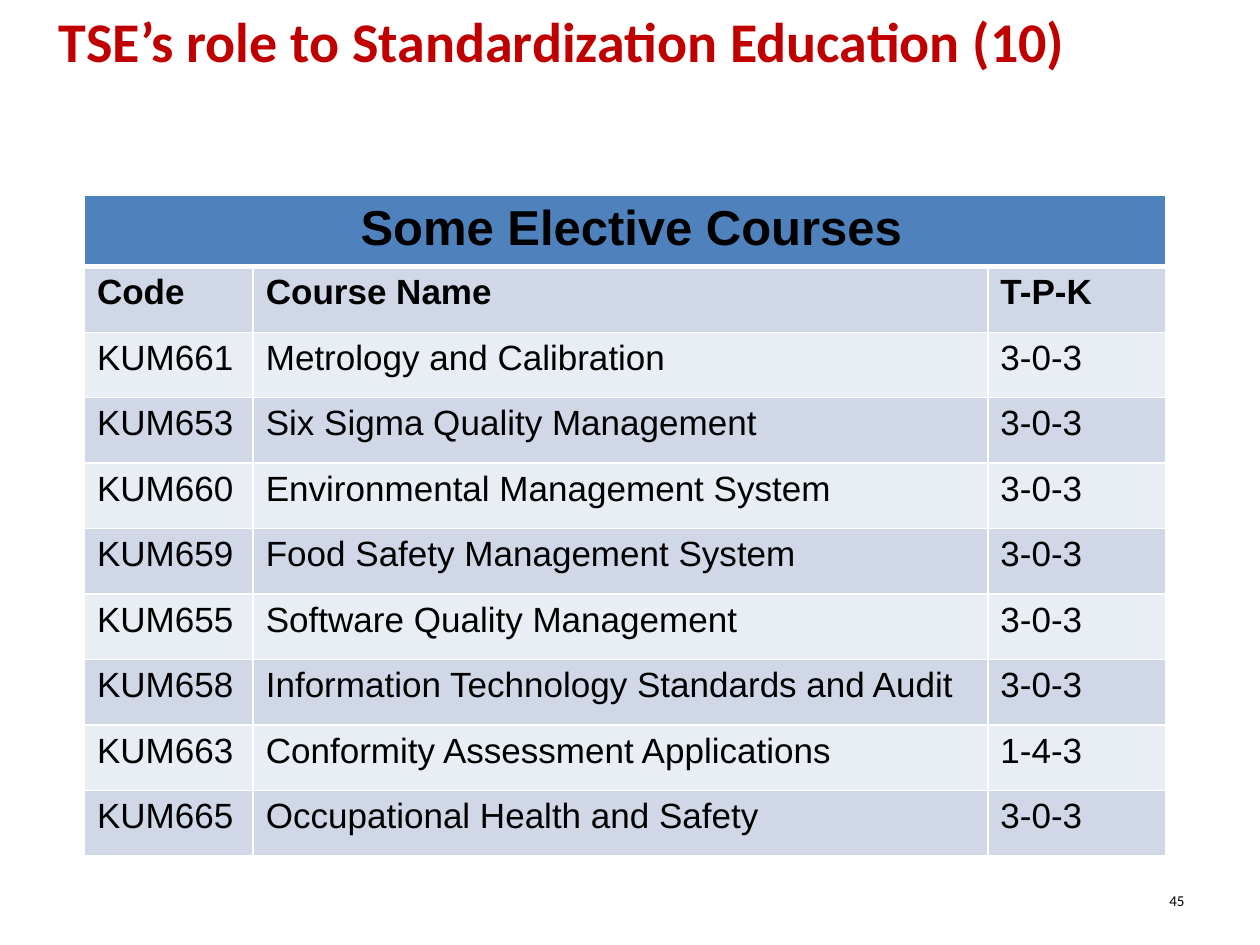
from dataclasses import dataclass

from lxml.etree import SubElement
from pptx import Presentation
from pptx.dml.color import RGBColor
from pptx.enum.text import MSO_ANCHOR, PP_ALIGN
from pptx.oxml.ns import qn
from pptx.util import Inches, Pt


@dataclass(frozen=True)
class Theme:
    title_red: str = "C00000"
    text: str = "000000"
    header_fill: str = "4F81BD"
    band_dark: str = "D0D8E8"
    band_light: str = "E9EDF4"
    border: str = "FFFFFF"
    title_size: float = 32
    header_size: float = 28
    body_size: float = 20
    number_size: float = 8.6
    heading_font: str = "Calibri"
    table_font: str = "Arial"


theme = Theme()


def write_text(text_frame, text, *, size, font, color=theme.text, bold=False,
               align=PP_ALIGN.LEFT):
    paragraph = text_frame.paragraphs[0]
    paragraph.alignment = align
    run = paragraph.add_run()
    run.text = text
    run.font.size = Pt(size)
    run.font.name = font
    run.font.bold = bold
    run.font.color.rgb = RGBColor.from_string(color)


def style_cell(cell, fill, *, top=1, bottom=1):
    properties = cell._tc.get_or_add_tcPr()
    for side, width in (("L", 1), ("R", 1), ("T", top), ("B", bottom)):
        line = SubElement(properties, qn(f"a:ln{side}"), w=str(Pt(width)))
        solid = SubElement(line, qn("a:solidFill"))
        SubElement(solid, qn("a:srgbClr"), val=theme.border)
    cell.fill.solid()
    cell.fill.fore_color.rgb = RGBColor.from_string(fill)


presentation = Presentation()
presentation.slide_width = Inches(10)
presentation.slide_height = Inches(7.5)
slide = presentation.slides.add_slide(presentation.slide_layouts[6])

# Title
title = slide.shapes.add_textbox(Inches(0.37), Inches(0), Inches(9.13), Inches(0.64))
title.text_frame.word_wrap = True
write_text(title.text_frame, "TSE’s role to Standardization Education (10)",
           size=theme.title_size, font=theme.heading_font,
           color=theme.title_red, bold=True)

# Slide number
number = slide.shapes.add_textbox(Inches(8.31), Inches(6.95), Inches(1.19), Inches(0.4))
number.text_frame.word_wrap = True
number.text_frame.vertical_anchor = MSO_ANCHOR.MIDDLE
write_text(number.text_frame, "45", size=theme.number_size,
           font=theme.heading_font, align=PP_ALIGN.RIGHT)

# Course table
courses = [
    ("Code", "Course Name", "T-P-K"),
    ("KUM661", "Metrology and Calibration", "3-0-3"),
    ("KUM653", "Six Sigma Quality Management", "3-0-3"),
    ("KUM660", "Environmental Management System", "3-0-3"),
    ("KUM659", "Food Safety Management System", "3-0-3"),
    ("KUM655", "Software Quality Management", "3-0-3"),
    ("KUM658", "Information Technology Standards and Audit", "3-0-3"),
    ("KUM663", "Conformity Assessment Applications", "1-4-3"),
    ("KUM665", "Occupational Health and Safety", "3-0-3"),
]
column_widths = (1.34, 5.83, 1.41)
header_height, row_height = 0.56, 0.52
table = slide.shapes.add_table(
    len(courses) + 1, len(column_widths), Inches(0.67), Inches(1.55),
    Inches(sum(column_widths)),
    Inches(header_height + row_height * len(courses))).table
for column, width in zip(table.columns, column_widths):
    column.width = Inches(width)
for index, row in enumerate(table.rows):
    row.height = Inches(row_height if index else header_height)

# Merged header row
for cell in table.rows[0].cells:
    style_cell(cell, theme.header_fill, bottom=3)
header = table.cell(0, 0)
header.merge(table.cell(0, len(column_widths) - 1))
header.margin_left = Inches(0.2)
write_text(header.text_frame, "Some Elective Courses", size=theme.header_size,
           font=theme.table_font, bold=True, align=PP_ALIGN.CENTER)

# Banded rows, the first with column headings
for row_index, course in enumerate(courses, start=1):
    is_heading = row_index == 1
    fill = theme.band_dark if row_index % 2 else theme.band_light
    for column_index, text in enumerate(course):
        cell = table.cell(row_index, column_index)
        style_cell(cell, fill, top=3 if is_heading else 1)
        write_text(cell.text_frame, text, size=theme.body_size,
                   font=theme.table_font, bold=is_heading)

presentation.save("out.pptx")
